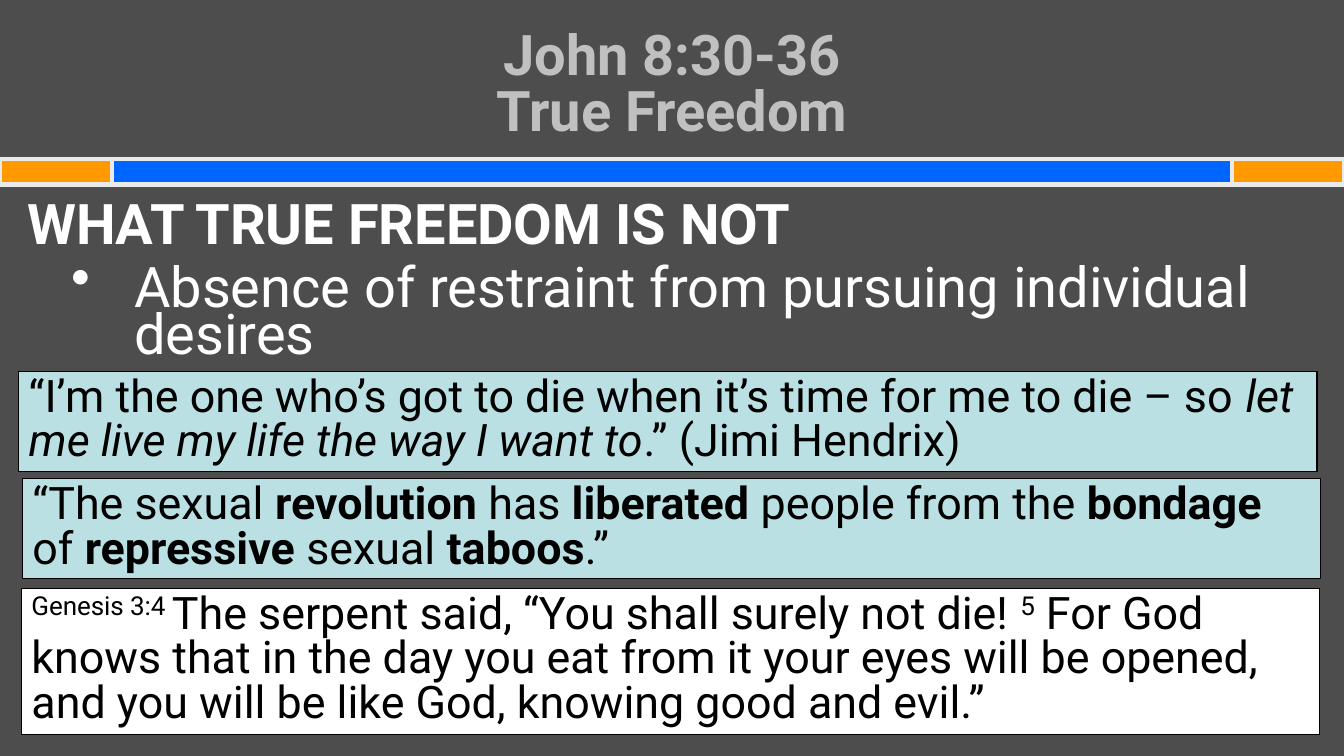
"""Builds the "True Freedom" slide on John 8:30-36."""
from pptx import Presentation
from pptx.dml.color import RGBColor
from pptx.enum.shapes import MSO_SHAPE
from pptx.enum.text import MSO_ANCHOR, PP_ALIGN
from pptx.util import Pt
from lxml import etree

RECTANGLE = MSO_SHAPE.RECTANGLE
TOP, MIDDLE = MSO_ANCHOR.TOP, MSO_ANCHOR.MIDDLE
LEFT, CENTER = PP_ALIGN.LEFT, PP_ALIGN.CENTER
DRAWING_NS = "{http://schemas.openxmlformats.org/drawingml/2006/main}"

FONT = "Roboto"
SLIDE_WIDTH, SLIDE_HEIGHT = 960, 540
BAND_TOP, BAND_HEIGHT, BAND_END = 113.76, 18, 80
QUOTE_WIDTH = 927.36

TITLE = "John 8:30-36\vTrue Freedom"
HEADING = "WHAT TRUE FREEDOM IS NOT"
POINT = "Absence of restraint from pursuing individual desires"

BAND = [
    (0, SLIDE_WIDTH, "0066FF"),
    (0, BAND_END, "FF9900"),
    (SLIDE_WIDTH - BAND_END, BAND_END, "FF9900"),
]
QUOTES = [
    (13.4, 265.2, 71.6, "BBE0E3", [
        ("“I’m the one who’s got to die when it’s time for me to die – so ", ""),
        ("let me live my life the way I want to", "italic"),
        (".” (Jimi Hendrix)", ""),
    ]),
    (16.1, 341.8, 71.6, "BBE0E3", [
        ("“The sexual ", ""), ("revolution", "bold"), (" has ", ""),
        ("liberated", "bold"), (" people from the ", ""), ("bondage", "bold"),
        (" of ", ""), ("repressive", "bold"), (" sexual ", ""),
        ("taboos", "bold"), (".”", ""),
    ]),
    (15.4, 420.3, 104.2, "FFFFFF", [
        ("Genesis 3:4 ", "raised"),
        ("The serpent said, “You shall surely not die! ", ""),
        ("5", "raised"),
        (" For God knows that in the day you eat from it your eyes will be opened, "
         "and you will be like God, knowing good and evil.”", ""),
    ]),
]


def color(hex_code):
    return RGBColor.from_string(hex_code)


def add_box(slide, left, top, width, height, fill, line, line_width):
    box = slide.shapes.add_shape(RECTANGLE, Pt(left), Pt(top), Pt(width), Pt(height))
    box.shadow.inherit = False
    box.fill.solid()
    box.fill.fore_color.rgb = color(fill)
    box.line.color.rgb = color(line)
    box.line.width = Pt(line_width)
    return box


def add_text_frame(slide, left, top, width, height, anchor):
    frame = slide.shapes.add_textbox(Pt(left), Pt(top), Pt(width), Pt(height)).text_frame
    frame.word_wrap = True
    frame.vertical_anchor = anchor
    return frame


def style(paragraph, size, hex_code, spacing, bold=None, align=LEFT):
    paragraph.alignment = align
    paragraph.line_spacing = spacing
    paragraph.font.name = FONT
    paragraph.font.size = Pt(size)
    paragraph.font.bold = bold
    paragraph.font.color.rgb = color(hex_code)


def indent(paragraph, margin, hanging, bullet=None):
    properties = paragraph._p.get_or_add_pPr()
    properties.set("marL", str(Pt(margin)))
    properties.set("indent", str(-Pt(hanging)))
    if bullet:
        mark = etree.Element(DRAWING_NS + "buChar", char=bullet)
        properties.find(DRAWING_NS + "defRPr").addprevious(mark)


def add_quote(slide, left, top, height, fill, passages):
    box = add_box(slide, left, top, QUOTE_WIDTH, height, fill, "000000", 0.75)
    box.text_frame.word_wrap = True
    box.text_frame.vertical_anchor = TOP
    quote = box.text_frame.paragraphs[0]
    style(quote, 32, "000000", Pt(32))
    for words, emphasis in passages:
        run = quote.add_run()
        run.text = words
        if emphasis == "bold":
            run.font.bold = True
        elif emphasis == "italic":
            run.font.italic = True
        elif emphasis == "raised":
            run.font._element.set("baseline", "30000")


def main():
    presentation = Presentation()
    presentation.slide_width = Pt(SLIDE_WIDTH)
    presentation.slide_height = Pt(SLIDE_HEIGHT)
    slide = presentation.slides.add_slide(presentation.slide_layouts[6])
    slide.background.fill.solid()
    slide.background.fill.fore_color.rgb = color("4D4D4D")

    for left, width, fill in BAND:
        add_box(slide, left, BAND_TOP, width, BAND_HEIGHT, fill, "EAEAEA", 3)

    title = add_text_frame(slide, 144, 21.6, 672, 80.64, MIDDLE)
    title.text = TITLE
    style(title.paragraphs[0], 40, "C0C0C0", Pt(40), True, CENTER)

    body = add_text_frame(slide, 12.24, 144, 936.72, 383.76, TOP)
    body.text = HEADING + "\n" + POINT
    heading, point = body.paragraphs
    for paragraph, bold in ((heading, True), (point, False)):
        style(paragraph, 40, "FFFFFF", 0.7, bold)
        paragraph.space_before = Pt(12)
    indent(heading, 27, 27)
    indent(point, 76.5, 45, "•")

    for quote in QUOTES:
        add_quote(slide, *quote)

    presentation.save("out.pptx")


if __name__ == "__main__":
    main()
